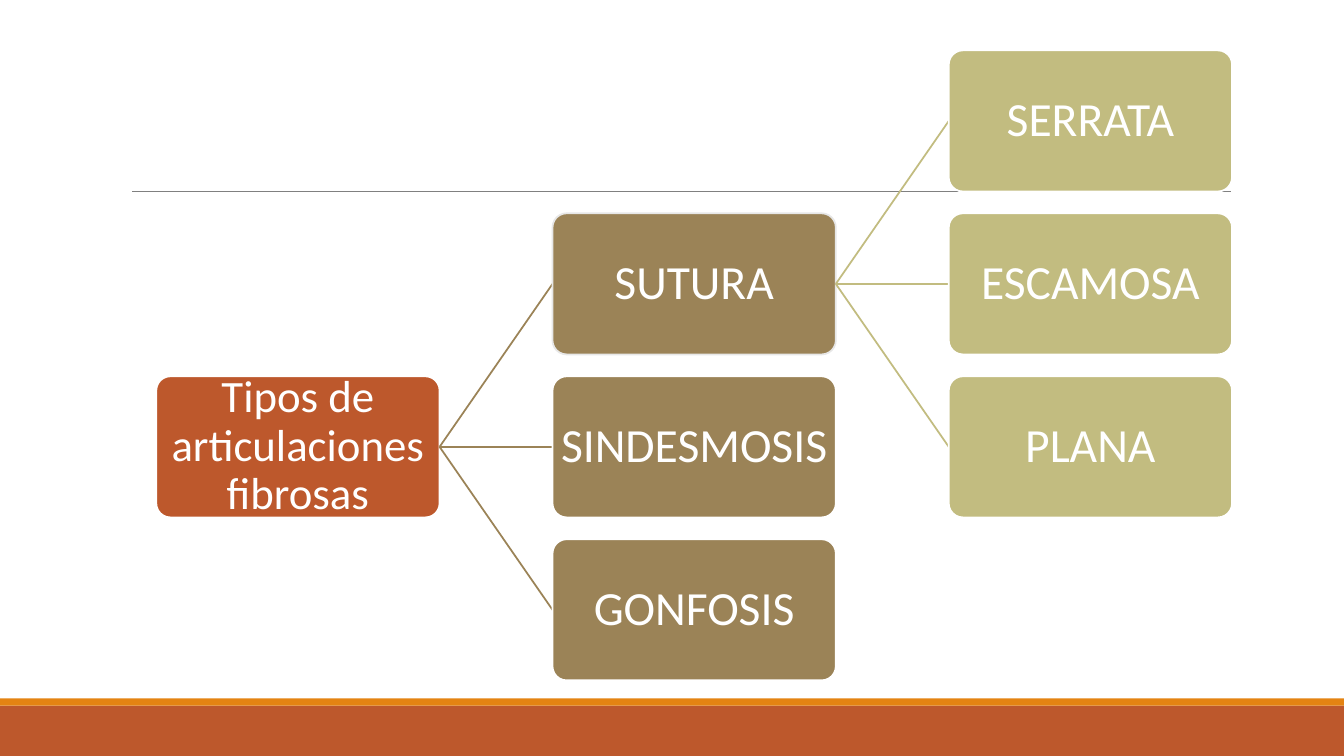
import pptx
import pptx.util
import pptx.dml.color
import pptx.enum.shapes
import pptx.enum.text
import pptx.oxml.ns
from dataclasses import dataclass
from lxml import etree

Inches, Pt = pptx.util.Inches, pptx.util.Pt
RGB = pptx.dml.color.RGBColor.from_string
SHAPE = pptx.enum.shapes.MSO_SHAPE


@dataclass(frozen=True)
class Theme:
    font: str = "Calibri"
    levels: tuple = ("BD582C", "9B8357", "C2BC80")
    accent: str = "E48312"
    rule: str = "808080"
    white: str = "FFFFFF"
    soft_edge: str = "E7E7E7"
    root_size: int = 32
    node_size: int = 34
    line: float = 1.25
    thin: float = 0.5


T = Theme()
NODE_W, NODE_H = 2.81, 1.4
COLS, ROWS = 3, 4

# Each node: text, row, edge colour, children
TREE = ("Tipos de articulaciones fibrosas", 2, T.white, [
    ("SUTURA", 1, T.soft_edge, [
        ("SERRATA", 0, T.white, []),
        ("ESCAMOSA", 1, T.white, []),
        ("PLANA", 2, T.white, []),
    ]),
    ("SINDESMOSIS", 2, T.white, []),
    ("GONFOSIS", 3, T.white, []),
])


def set_format(obj, values):
    for name, value in values.items():
        setattr(obj, name, value)


def add_block(s, kind, box, fill, edge=None):
    sp = s.shapes.add_shape(kind, *map(Inches, box))
    sp.shadow.inherit = False
    sp.fill.solid()
    sp.fill.fore_color.rgb = RGB(fill)
    if edge:
        sp.line.color.rgb = RGB(edge)
        sp.line.width = Pt(T.line)
    else:
        sp.line.fill.background()
    return sp


def add_line(s, start, end, color, width):
    points = map(Inches, (*start, *end))
    cx = s.shapes.add_connector(pptx.enum.shapes.MSO_CONNECTOR.STRAIGHT, *points)
    cx.line.color.rgb = RGB(color)
    cx.line.width = Pt(width)
    etree.SubElement(cx._element.spPr, pptx.oxml.ns.qn("a:effectLst"))


def add_node(s, x, y, text, level, edge):
    sp = add_block(s, SHAPE.ROUNDED_RECTANGLE, (x, y, NODE_W, NODE_H),
                   T.levels[level], edge)
    sp.adjustments[0] = 0.1
    tf = sp.text_frame
    margins = ("margin_left", "margin_top", "margin_right", "margin_bottom")
    set_format(tf, dict.fromkeys(margins, Inches(0.02)))
    set_format(tf, {"word_wrap": True,
                    "vertical_anchor": pptx.enum.text.MSO_ANCHOR.MIDDLE})
    p = tf.paragraphs[0]
    set_format(p, {"alignment": pptx.enum.text.PP_ALIGN.CENTER,
                   "line_spacing": 0.9})
    r = p.add_run()
    r.text = text
    size = T.node_size if level else T.root_size
    set_format(r.font, {"name": T.font, "size": Pt(size)})
    r.font.color.rgb = RGB(T.white)


def add_tree(s, box, node, level=0, parent=None):
    """Place a node in the box's grid, linked to its parent, then its children."""
    left, top, width, height = box
    text, row, edge, children = node
    x = left + level * (width - NODE_W) / (COLS - 1)
    y = top + row * (height - NODE_H) / (ROWS - 1)
    middle = y + NODE_H / 2
    if parent:
        add_line(s, parent, (x, middle), T.levels[level], T.line)
    add_node(s, x, y, text, level, edge)
    for child in children:
        add_tree(s, box, child, level + 1, (x + NODE_W, middle))


def add_backdrop(s, box):
    left, top, width, height = box
    bottom = top + height
    # Footer bands
    add_block(s, SHAPE.RECTANGLE, (left, bottom - 0.5, width, 0.5), T.levels[0])
    add_block(s, SHAPE.RECTANGLE, (left, bottom - 0.57, width, 0.07), T.accent)
    # Heading rule
    y = top + 1.9
    add_line(s, (left + 1.31, y), (left + 12.21, y), T.rule, T.thin)


def main():
    prs = pptx.Presentation()
    set_format(prs, {"slide_width": Inches(13.33), "slide_height": Inches(7.5)})
    s = prs.slides.add_slide(prs.slide_layouts[6])
    add_backdrop(s, (0, 0, 13.33, 7.5))
    add_tree(s, (1.55, 0.5, 10.67, 6.25), TREE)
    prs.save("out.pptx")


if __name__ == "__main__":
    main()
